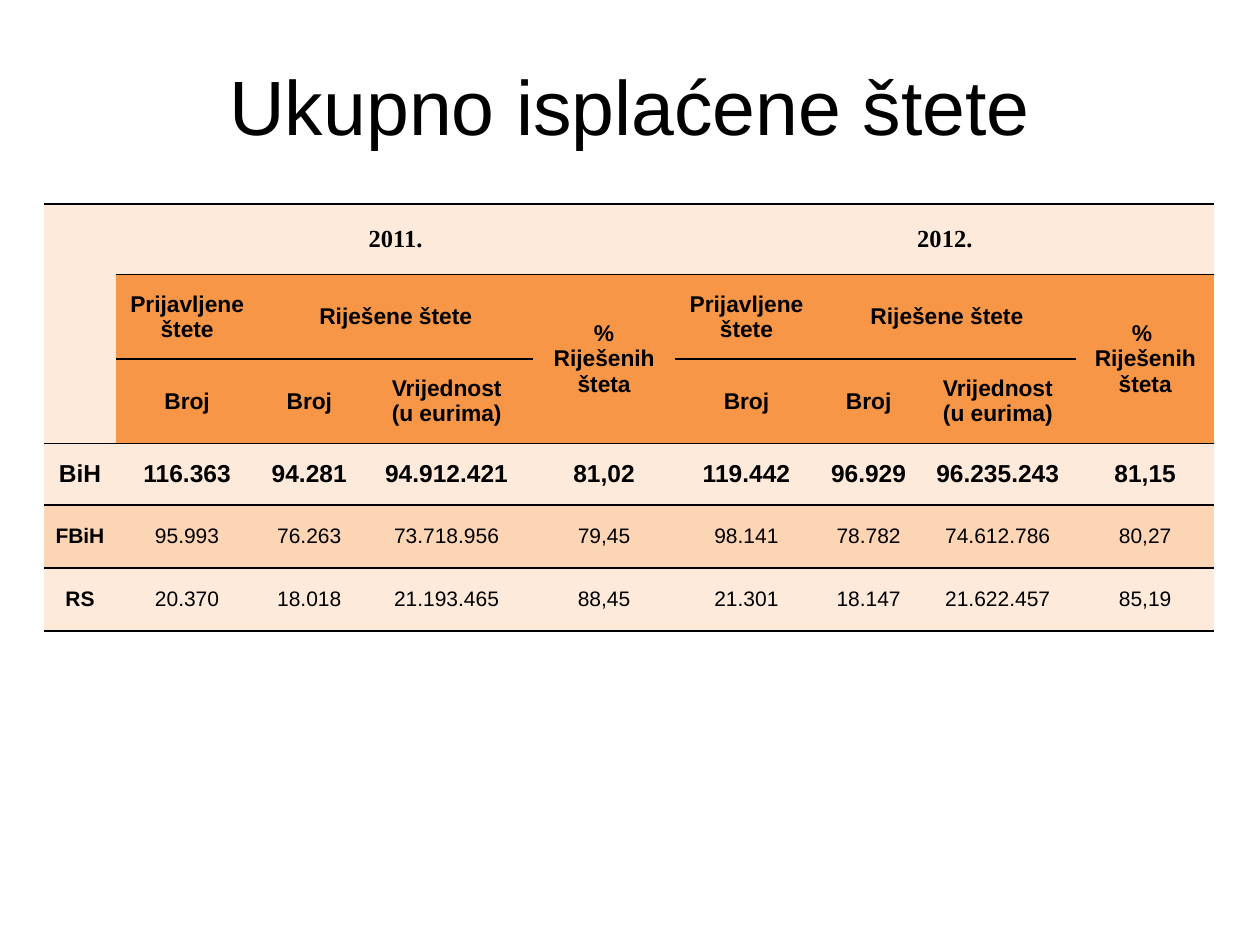
from dataclasses import dataclass

from lxml import etree
from pptx import Presentation
from pptx.dml.color import RGBColor
from pptx.enum.text import MSO_ANCHOR, PP_ALIGN
from pptx.oxml.ns import qn
from pptx.util import Inches, Pt

MIDDLE = MSO_ANCHOR.MIDDLE
CENTER = PP_ALIGN.CENTER


@dataclass(frozen=True)
class Theme:
    ink: str = "000000"
    pale: str = "FDEADA"
    peach: str = "FCD5B5"
    orange: str = "F79646"
    sans: str = "Arial"
    serif: str = "Times New Roman"
    title_size: int = 44
    large_size: int = 14
    header_size: int = 13
    body_size: int = 12
    rule_width: float = 1


THEME = Theme()

COLUMN_WIDTHS = [0.57, 1.13, 0.81, 1.37, 1.13, 1.13, 0.81, 1.24, 1.1]
ROW_HEIGHTS = [0.56, 0.67, 0.67, 0.49, 0.5, 0.5]
YEARS = ["2011.", "2012."]
SHARE_LABELS = ["% Riješenih šteta", "% \nRiješenih šteta"]
CLAIMS = [
    ["BiH", "116.363", "94.281", "94.912.421", "81,02",
     "119.442", "96.929", "96.235.243", "81,15"],
    ["FBiH", "95.993", "76.263", "73.718.956", "79,45",
     "98.141", "78.782", "74.612.786", "80,27"],
    ["RS", "20.370", "18.018", "21.193.465", "88,45",
     "21.301", "18.147", "21.622.457", "85,19"],
]


def header_rows():
    years, groups, measures = [""], [""], [""]
    for year, share in zip(YEARS, SHARE_LABELS):
        years += [year, "", "", ""]
        groups += ["Prijavljene štete", "Riješene štete", "", share]
        measures += ["Broj", "Broj", "Vrijednost\n(u eurima)", ""]
    return [years, groups, measures]


def merged_areas():
    areas = [(0, 0, 2, 0)]
    for first in (1, 5):
        areas += [
            (0, first, 0, first + 3),
            (1, first + 1, 1, first + 2),
            (1, first + 3, 2, first + 3),
        ]
    return areas


def cell_style(row, column):
    fill, font, size, bold = THEME.pale, THEME.sans, THEME.body_size, column == 0
    if row == 0:
        font, size, bold = THEME.serif, THEME.large_size, True
    elif row < 3:
        size, bold = THEME.header_size, True
        fill = THEME.orange if column else THEME.pale
    elif row == 3:
        size, bold = THEME.large_size, True
    elif row == 4:
        fill = THEME.peach
    return fill, {"name": font, "size": Pt(size), "bold": bold}


class SlideBuilder:
    def __init__(self, deck, theme):
        self.theme = theme
        self.slide = deck.slides.add_slide(deck.slide_layouts[5])

    def format_text(self, frame, font_format):
        for paragraph in frame.paragraphs:
            paragraph.alignment = CENTER
            for name, value in font_format.items():
                setattr(paragraph.font, name, value)
            paragraph.font.color.rgb = RGBColor.from_string(self.theme.ink)

    def title(self, text, left, top, width, height):
        heading = self.slide.shapes.title
        position = {"left": left, "top": top, "width": width, "height": height}
        for name, value in position.items():
            setattr(heading, name, Inches(value))
        heading.text_frame.text = text
        heading.text_frame.vertical_anchor = MIDDLE
        self.format_text(
            heading.text_frame,
            {"name": self.theme.sans, "size": Pt(self.theme.title_size)},
        )

    def borders(self, cell):
        properties = cell._tc.get_or_add_tcPr()
        for side in ("lnL", "lnR", "lnT", "lnB"):
            line = etree.SubElement(properties, qn(f"a:{side}"))
            if side in ("lnL", "lnR"):
                etree.SubElement(line, qn("a:noFill"))
                continue
            line.set("w", str(Pt(self.theme.rule_width)))
            solid = etree.SubElement(line, qn("a:solidFill"))
            etree.SubElement(solid, qn("a:srgbClr"), val=self.theme.ink)

    def table(self, rows, left, top, widths, heights, merges, style):
        frame = self.slide.shapes.add_table(
            len(heights), len(widths), Inches(left), Inches(top),
            Inches(sum(widths)), Inches(sum(heights)),
        )
        grid = frame.table
        grid.first_row = False
        grid.horz_banding = False
        for column, width in zip(grid.columns, widths):
            column.width = Inches(width)
        for row, height in zip(grid.rows, heights):
            row.height = Inches(height)
        cell_format = {
            "vertical_anchor": MIDDLE,
            "margin_left": Inches(0.07),
            "margin_right": Inches(0.07),
            "margin_top": 0,
            "margin_bottom": 0,
        }
        for r, values in enumerate(rows):
            for c, value in enumerate(values):
                cell = grid.cell(r, c)
                fill, font_format = style(r, c)
                for name, setting in cell_format.items():
                    setattr(cell, name, setting)
                self.borders(cell)
                cell.fill.solid()
                cell.fill.fore_color.rgb = RGBColor.from_string(fill)
                cell.text_frame.text = value
                self.format_text(cell.text_frame, font_format)
        for first_row, first_column, last_row, last_column in merges:
            grid.cell(first_row, first_column).merge(
                grid.cell(last_row, last_column)
            )


def main():
    deck = Presentation()
    deck.slide_width = Inches(10)
    deck.slide_height = Inches(7.5)
    builder = SlideBuilder(deck, THEME)
    builder.title("Ukupno isplaćene štete", 0.5, 0.21, 9, 1.25)
    builder.table(
        header_rows() + CLAIMS, 0.35, 1.62, COLUMN_WIDTHS, ROW_HEIGHTS,
        merged_areas(), cell_style,
    )
    deck.save("out.pptx")


if __name__ == "__main__":
    main()
